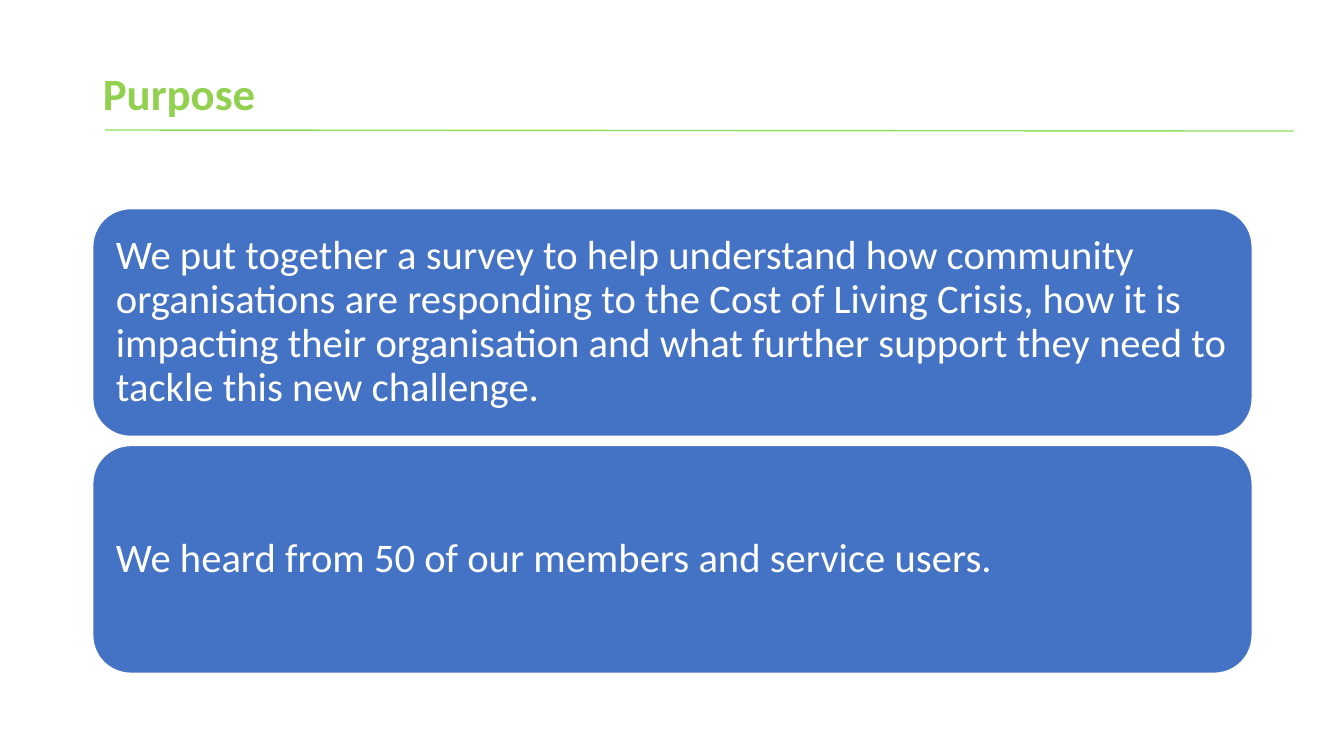
import dataclasses

import pptx
import pptx.dml.color
import pptx.enum.shapes
import pptx.enum.text
import pptx.oxml.ns
import pptx.util
from lxml import etree

Inches = pptx.util.Inches


@dataclasses.dataclass(frozen=True)
class Theme:
    """Colours, font and type sizes of the slide."""

    title: str = "92D050"
    rule: str = "8EDF5C"
    panel: str = "4472C4"
    white: str = "FFFFFF"
    font: str = "Calibri"
    title_size: int = 32
    body_size: int = 29


THEME = Theme()
STATEMENTS = (
    "We put together a survey to help understand how community organisations "
    "are responding to the Cost of Living Crisis, how it is impacting their "
    "organisation and what further support they need to tackle this new challenge.",
    "We heard from 50 of our members and service users.",
)


def rgb(value):
    """Return a colour object for a hex string."""
    return pptx.dml.color.RGBColor.from_string(value)


def write_text(shape, text, size, color, bold=False):
    """Set one left-aligned, vertically centred paragraph in a shape."""
    frame = shape.text_frame
    frame.text = text
    frame.word_wrap = True
    frame.vertical_anchor = pptx.enum.text.MSO_ANCHOR.MIDDLE
    paragraph = frame.paragraphs[0]
    paragraph.alignment = pptx.enum.text.PP_ALIGN.LEFT
    paragraph.line_spacing = 0.9
    paragraph.font.name = THEME.font
    paragraph.font.size = pptx.util.Pt(size)
    paragraph.font.bold = bold
    paragraph.font.color.rgb = rgb(color)


def add_heading(slide, left, top, width, height):
    """Place the title in its box with a thin rule under its text."""
    title = slide.shapes.title
    title.left, title.top = Inches(left), Inches(top)
    title.width, title.height = Inches(width), Inches(height)
    write_text(title, "Purpose", THEME.title_size, THEME.title, bold=True)
    rule = slide.shapes.add_connector(
        pptx.enum.shapes.MSO_CONNECTOR.STRAIGHT,
        Inches(left + 0.12), Inches(top + 0.89),
        Inches(left + width + 0.41), Inches(top + 0.9),
    )
    rule.line.color.rgb = rgb(THEME.rule)
    rule.line.width = pptx.util.Pt(1)
    properties = rule._element.spPr
    etree.SubElement(properties, pptx.oxml.ns.qn("a:effectLst"))


def add_panel(slide, text, left, top, width, height):
    """Place one rounded panel holding a statement."""
    panel = slide.shapes.add_shape(
        pptx.enum.shapes.MSO_SHAPE.ROUNDED_RECTANGLE,
        Inches(left), Inches(top), Inches(width), Inches(height),
    )
    panel.shadow.inherit = False
    panel.fill.solid()
    panel.fill.fore_color.rgb = rgb(THEME.panel)
    panel.line.color.rgb = rgb(THEME.white)
    panel.line.width = pptx.util.Pt(1)
    frame = panel.text_frame
    frame.margin_left = frame.margin_right = Inches(0.12)
    frame.margin_top = frame.margin_bottom = Inches(0.12)
    write_text(panel, text, THEME.body_size, THEME.white)


def add_statements(slide, left, top, width, height, gap=0.09):
    """Stack the statements as equal panels filling the box."""
    count = len(STATEMENTS)
    panel_height = (height - gap * (count - 1)) / count
    for index, text in enumerate(STATEMENTS):
        panel_top = top + index * (panel_height + gap)
        add_panel(slide, text, left, panel_top, width, panel_height)


def main():
    """Build and save the presentation."""
    presentation = pptx.Presentation()
    presentation.slide_width = Inches(13.33)
    presentation.slide_height = Inches(7.5)
    slide = presentation.slides.add_slide(presentation.slide_layouts[5])
    add_heading(slide, 0.92, 0.4, 11.5, 1.11)
    add_statements(slide, 0.92, 2.07, 11.5, 4.61)
    presentation.save("out.pptx")


if __name__ == "__main__":
    main()
